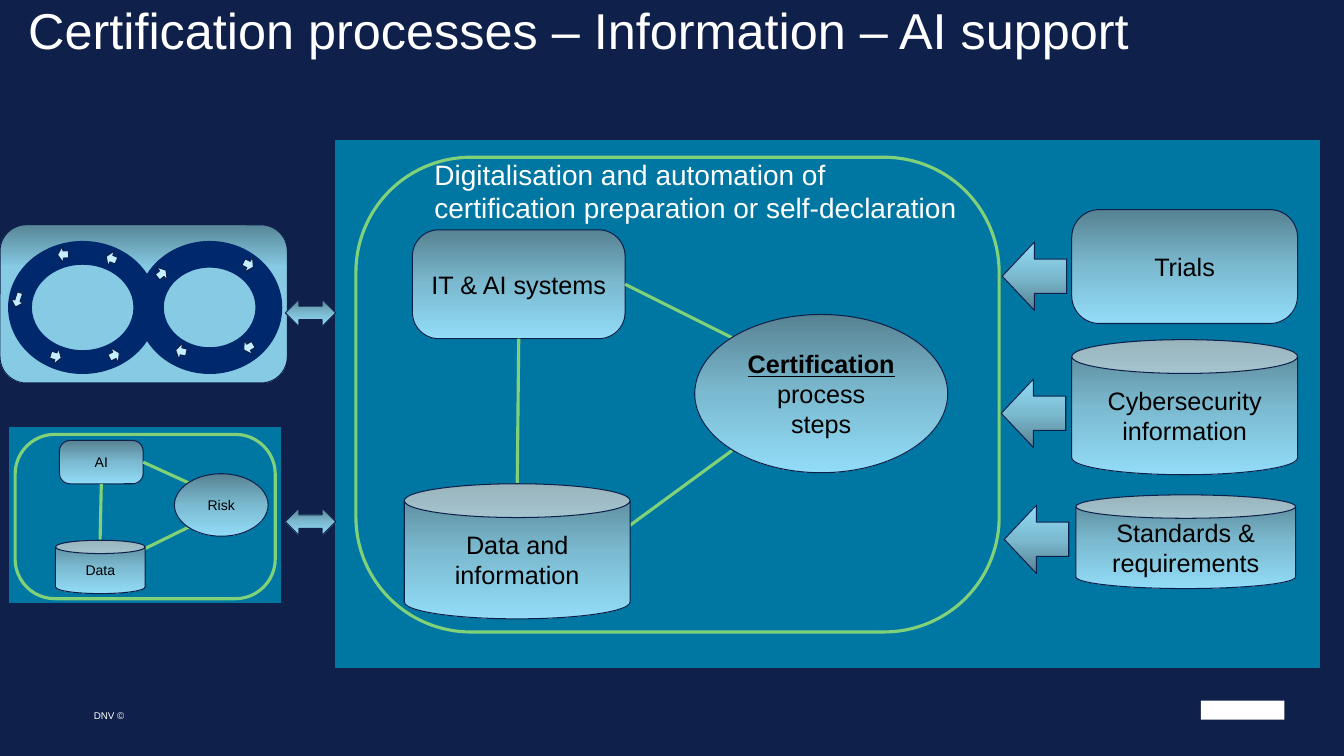
"""Builds the slide on certification processes, information and AI support."""
from copy import deepcopy

from lxml import etree
from pptx import Presentation
from pptx.dml.color import RGBColor
from pptx.enum.shapes import MSO_CONNECTOR, MSO_SHAPE
from pptx.enum.text import MSO_ANCHOR, PP_ALIGN
from pptx.oxml.ns import qn
from pptx.util import Inches, Pt

RECT, ROUNDED = MSO_SHAPE.RECTANGLE, MSO_SHAPE.ROUNDED_RECTANGLE
OVAL, CAN, DONUT = MSO_SHAPE.OVAL, MSO_SHAPE.CAN, MSO_SHAPE.DONUT
ARROW, DOUBLE_ARROW = MSO_SHAPE.RIGHT_ARROW, MSO_SHAPE.LEFT_RIGHT_ARROW
STRAIGHT = MSO_CONNECTOR.STRAIGHT
MIDDLE, CENTER = MSO_ANCHOR.MIDDLE, PP_ALIGN.CENTER
BOTTOM_SIDE, RIGHT_SIDE = 2, 3

NAVY = RGBColor(0x0F, 0x20, 0x4B)
TEAL = RGBColor(0x00, 0x77, 0xA3)
GREEN = RGBColor(0x81, 0xD1, 0x78)
RING_BLUE = RGBColor(0x00, 0x28, 0x6D)
PALE_BLUE = RGBColor(0xC5, 0xEF, 0xFF)
WHITE = RGBColor(0xFF, 0xFF, 0xFF)
BLACK = RGBColor(0x00, 0x00, 0x00)
STEEL = [(0, RGBColor(0x57, 0x82, 0x92)), (0.5, RGBColor(0x7B, 0xBA, 0xD0)),
         (1, RGBColor(0x92, 0xDC, 0xF7))]
SKY = [(0, RGBColor(0x57, 0x86, 0x97)), (0.27, RGBColor(0x86, 0xCA, 0xE3))]
CORNER = [0.242]

deck = Presentation()
deck.slide_width, deck.slide_height = Inches(13.33), Inches(7.5)
page = deck.slides.add_slide(deck.slide_layouts[6])
page.background.fill.solid()
page.background.fill.fore_color.rgb = NAVY


def add_span(para, text, color, **formats):
    span = para.add_run()
    span.text = text
    span.font.color.rgb = color
    for name, value in {"name": "Arial", **formats}.items():
        setattr(span.font, name, value)


def add_box(kind, place, fill=STEEL, line=NAVY, width=0.75, adjust=(), turn=0, text="", size=18):
    box = page.shapes.add_shape(kind, *map(Inches, place))
    box.shadow.inherit = False
    box.rotation = turn
    for index, value in enumerate(adjust):
        box.adjustments[index] = value
    if fill is None:
        box.fill.background()
    elif isinstance(fill, list):
        box.fill.gradient()
        box.fill.gradient_angle = 270
        stop_list = box._element.spPr.find(".//" + qn("a:gsLst"))
        for _ in fill[2:]:
            stop_list.append(deepcopy(stop_list[0]))
        for stop, (position, color) in zip(box.fill.gradient_stops, fill):
            stop.position, stop.color.rgb = position, color
    else:
        box.fill.solid()
        box.fill.fore_color.rgb = fill
    if line is None:
        box.line.fill.background()
    else:
        box.line.color.rgb, box.line.width = line, Pt(width)
    if text:
        box.text_frame.vertical_anchor = MIDDLE
        para = box.text_frame.paragraphs[0]
        para.alignment = CENTER
        add_span(para, text, BLACK, size=Pt(size))
    return box


networks = [
    {"panel": (3.32, 1.38, 9.78, 5.25), "frame": (3.53, 1.56, 6.38, 4.71),
     "system": (4.09, 2.28, 2.11, 1.08), "data": (4.01, 4.8, 2.24, 1.34),
     "process": (6.89, 3.12, 2.51, 1.57), "size": 18,
     "labels": ("IT & AI systems", "Data and information", ""),
     "down": (5.13, 4.8), "across": (7.26, 3.35), "up": [(6.21, 5.24), (7.26, 4.47)]},
    {"panel": (0.08, 4.23, 2.71, 1.76), "frame": (0.15, 4.31, 2.58, 1.63),
     "system": (0.59, 4.37, 0.83, 0.43), "data": (0.55, 5.36, 0.89, 0.53),
     "process": (1.73, 4.7, 0.93, 0.62), "size": 10,
     "labels": ("AI", "Data", "Risk"),
     "down": (0.99, 5.49), "across": (1.87, 4.79), "up": [(1.26, 5.53), (1.87, 5.23)]},
]
process_boxes = []
for network in networks:
    system_label, data_label, process_label = network["labels"]
    size = network["size"]
    add_box(RECT, network["panel"], TEAL)
    add_box(ROUNDED, network["frame"], None, GREEN, 2.25, CORNER)
    system = add_box(ROUNDED, network["system"], adjust=CORNER, text=system_label, size=size)
    links = [(BOTTOM_SIDE, network["down"], network["down"]),
             (RIGHT_SIDE, network["across"], network["across"]),
             (None, *network["up"])]
    for side, start, end in links:
        link = page.shapes.add_connector(STRAIGHT, *map(Inches, start + end))
        if side is not None:
            link.begin_connect(system, side)
        link.line.color.rgb, link.line.width = GREEN, Pt(2.25)
        etree.SubElement(link._element.spPr, qn("a:effectLst"))
    process_boxes.append(add_box(OVAL, network["process"], text=process_label, size=size))
    add_box(CAN, network["data"], text=data_label, size=size)

steps = process_boxes[0].text_frame
steps.vertical_anchor = MIDDLE
steps_para = steps.paragraphs[0]
steps_para.alignment = CENTER
add_span(steps_para, "Certification", BLACK, size=Pt(18), bold=True, underline=True)
add_span(steps_para, " process", BLACK, size=Pt(18))
steps_para.add_line_break()
add_span(steps_para, "steps", BLACK, size=Pt(18))

sources = [
    (ROUNDED, (10.63, 2.08, 2.24, 1.13), CORNER, "Trials", (9.94, 2.4)),
    (CAN, (10.63, 3.37, 2.24, 1.34), (), "Cybersecurity information", (9.93, 3.76)),
    (CAN, (10.67, 4.91, 2.18, 0.93), (), "Standards & requirements", (9.96, 5.01)),
]
for kind, place, adjust, label, arrow_corner in sources:
    add_box(kind, place, adjust=adjust, text=label)
    add_box(ARROW, (*arrow_corner, 0.64, 0.68), turn=180)

add_box(ROUNDED, (0, 2.23, 2.85, 1.57), SKY)
add_box(DONUT, (0.08, 2.39, 1.48, 1.32), RING_BLUE, None, adjust=[0.179])
add_box(DONUT, (1.36, 2.39, 1.44, 1.32), RING_BLUE, None, adjust=[0.201])
loop_arrows = [
    (0.57, 2.44, 0.11, 0.17, 176.5), (0.1, 2.91, 0.15, 0.13, 107.8),
    (0.5, 3.45, 0.11, 0.17, 17.3), (1.55, 2.63, 0.11, 0.17, 320.3),
    (2.41, 2.54, 0.11, 0.17, 27.8), (2.41, 3.36, 0.11, 0.17, 149.1),
    (1.74, 3.4, 0.11, 0.17, 192.7), (1.08, 3.44, 0.11, 0.17, 332.6),
    (1.05, 2.48, 0.11, 0.17, 203.1),
]
for *place, turn in loop_arrows:
    add_box(ARROW, place, PALE_BLUE, adjust=(0.421, 0.5), turn=turn)

for top in (2.97, 5.04):
    add_box(DOUBLE_ARROW, (2.83, top, 0.5, 0.27))

add_box(RECT, (11.91, 6.95, 0.83, 0.19), WHITE, None)

captions = [
    ((0.28, 0.09, 13, 0.68), ["Certification processes – Information – AI support"],
     36, (0, 0), 0.83, True),
    ((4.21, 1.51, 6.83, 0.77),
     ["Digitalisation and automation of", "certification preparation or self-declaration"],
     20, (0.1, 0.05), 1, True),
    ((0.93, 7.04, 0.31, 0.12), ["DNV ©"], 7, (0, 0), 1, False),
]
for place, lines, size, (side_margin, end_margin), spacing, wrap in captions:
    frame = page.shapes.add_textbox(*map(Inches, place)).text_frame
    margins = {"margin_left": side_margin, "margin_right": side_margin,
               "margin_top": end_margin, "margin_bottom": end_margin}
    for name, value in margins.items():
        setattr(frame, name, Inches(value))
    frame.word_wrap = wrap
    para = frame.paragraphs[0]
    para.line_spacing = spacing
    for index, line in enumerate(lines):
        if index:
            para.add_line_break()
        add_span(para, line, WHITE, size=Pt(size))

deck.save("out.pptx")
